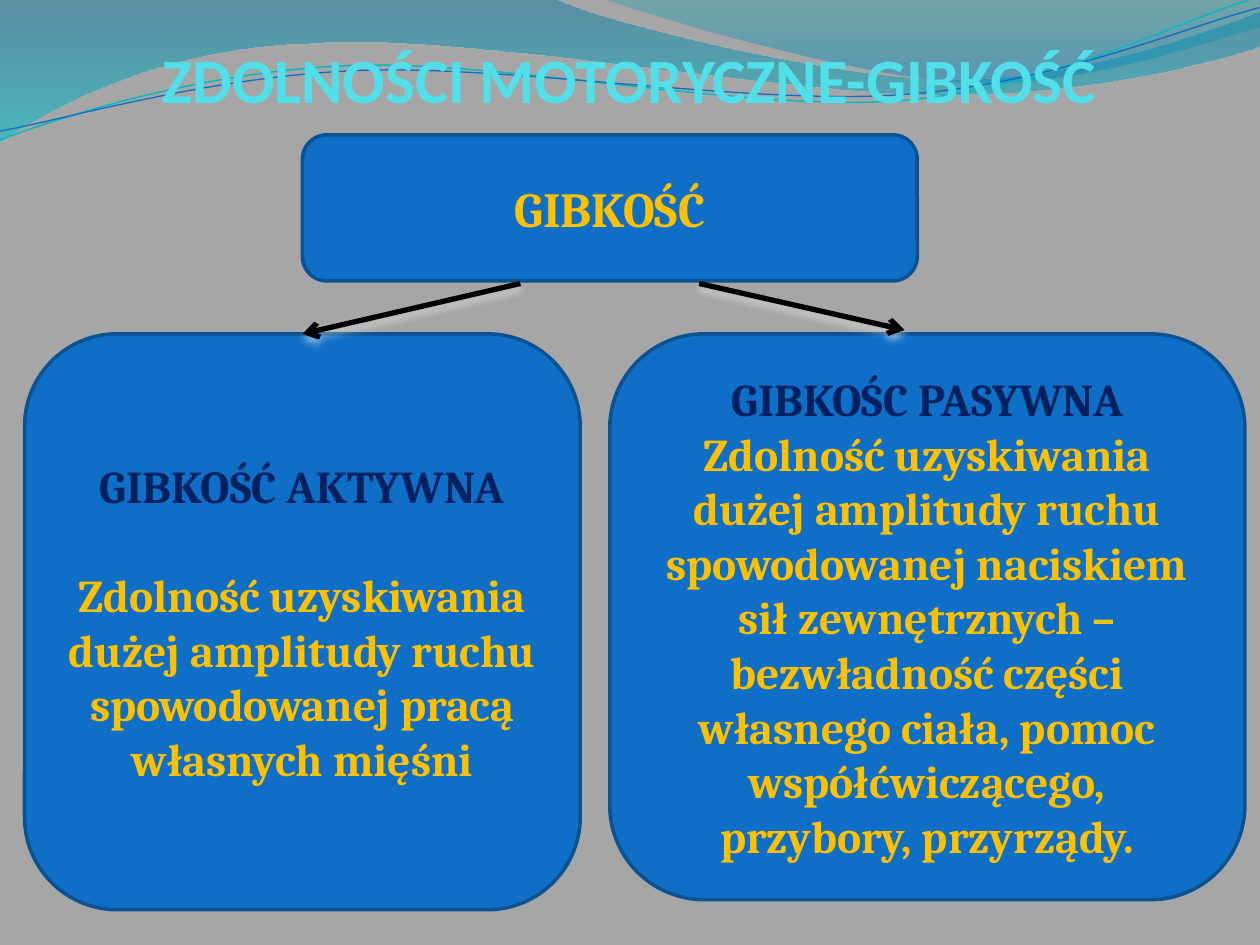
from math import cos, radians, sin

from lxml import etree
from pptx import Presentation
from pptx.dml.color import RGBColor
from pptx.enum.shapes import MSO_CONNECTOR, MSO_SHAPE
from pptx.enum.text import MSO_ANCHOR, PP_ALIGN
from pptx.oxml.ns import qn
from pptx.util import Inches, Pt

STRAIGHT = MSO_CONNECTOR.STRAIGHT
ROUNDED = MSO_SHAPE.ROUNDED_RECTANGLE
CENTER = PP_ALIGN.CENTER
MIDDLE, BOTTOM = MSO_ANCHOR.MIDDLE, MSO_ANCHOR.BOTTOM

# Grid of 100 columns by 75 rows
SLIDE_W, SLIDE_H = Inches(10), Inches(7.5)
COLUMN, ROW = SLIDE_W / 100, SLIDE_H / 75
TOP_SIDE = 0
LINE_TILT = -2.7

GREY, BLUE, DARK_BLUE = "A6A6A6", "0F6FC6", "0B5292"
NAVY, GOLD, AQUA, BLACK, WHITE = "002060", "FFC000", "51E0EA", "000000", "FFFFFF"

# Wave outlines on the grid: two numbers make a line, six make a curve
BROAD_WAVE = [(0, 0), (44, -0.1), (47.6, 1.7, 66.4, 6.3, 75.8, 6.3),
              (85.3, 6.3, 95.8, 2.6, 100, 0.9), (100.1, 3.6),
              (98.3, 4.4, 87, 7.6, 74.6, 7.5), (62.2, 7.5, 38.2, 2.8, 25.7, 3.4),
              (12.9, 3.6, 4.6, 8.3, -0.1, 11.3)]
RIGHT_WAVE = [(47.9, -0.1), (50.9, 1.1, 68.2, 6.2, 76.9, 6.5),
              (85.6, 6.9, 96.1, 3.2, 100, 2.1), (100, 0)]
TEAL_LINE = [(0, 11.1), (4.8, 9.3, 15.8, 5.7, 27.7, 5.2),
             (39.5, 4.7, 59.3, 8.9, 71.3, 8), (83.3, 7.1, 93.8, 1.5, 99.8, -0.2)]
BLUE_LINE = [(0, 10.4), (4.7, 9.6, 16.4, 6.1, 28.3, 5.6),
             (40.3, 5.1, 59.7, 8.4, 71.7, 7.5), (83.6, 6.7, 94.1, 2.1, 100, 0.6)]


def rgb(value):
    return RGBColor.from_string(value)


def on_grid(*lengths):
    """Turn alternating column and row values into slide lengths."""
    return [round(n * (ROW if i % 2 else COLUMN)) for i, n in enumerate(lengths)]


def level(outline, center, tilt):
    """Turn an outline back by its tilt around a center."""
    (cx, cy), turn = center, radians(-tilt)
    leveled = []
    for segment in outline:
        pairs = [(x - cx, y - cy) for x, y in zip(segment[::2], segment[1::2])]
        leveled.append([n for x, y in pairs
                        for n in (cx + x * cos(turn) - y * sin(turn),
                                  cy + x * sin(turn) + y * cos(turn))])
    return leveled


def add_wave(slide, outline, closed):
    """Draw an outline, joining each curve's three nodes into one Bezier."""
    start, *nodes = [on_grid(*pair) for segment in outline
                     for pair in zip(segment[::2], segment[1::2])]
    builder = slide.shapes.build_freeform(*start, scale=1.0)
    builder.add_line_segments(nodes, close=closed)
    wave = builder.convert_to_shape()
    wave.shadow.inherit = False
    steps = wave.element.spPr.iter(qn("a:lnTo"))
    steps = iter(list(steps))
    for segment in outline[1:]:
        step = next(steps)
        if len(segment) == 6:
            step.tag = qn("a:cubicBezTo")
            for _ in range(2):
                extra = next(steps)
                step.append(extra[0])
                extra.getparent().remove(extra)
    return wave


def add_wave_band(slide, outline, stops):
    band = add_wave(slide, outline, True)
    band.line.fill.background()
    band.fill.gradient()
    band.fill.gradient_angle = 270
    for stop, (position, color, _) in zip(band.fill.gradient_stops, stops):
        stop.position = position
        stop.color.rgb = rgb(color)
    fill_colors = band.element.spPr.iter(qn("a:srgbClr"))
    for node, (_, _, opacity) in zip(fill_colors, stops):
        etree.SubElement(node, qn("a:alpha"), val=str(opacity * 1000))


def add_wave_line(slide, outline, center, color, width):
    line = add_wave(slide, level(outline, center, LINE_TILT), False)
    line.rotation = LINE_TILT
    line.fill.background()
    line.line.color.rgb = rgb(color)
    line.line.width = Pt(width)


def add_header_waves(slide):
    add_wave_band(slide, BROAD_WAVE, [(0, "0074A1", 45), (1, "00C6CF", 55)])
    add_wave_band(slide, RIGHT_WAVE, [(0, "00A1A9", 30), (0.8, "008BBF", 45)])
    add_wave_line(slide, TEAL_LINE, (49.9, 5.75), "0AB8BF", 0.85)
    add_wave_line(slide, BLUE_LINE, (49.95, 5.9), BLUE, 0.75)


def write(frame, lines, font, size, gap=0):
    """Write (text, colour) paragraphs, centred, with a gap between them."""
    frame.word_wrap = True
    for index, (text, color) in enumerate(lines):
        paragraph = frame.add_paragraph() if index else frame.paragraphs[0]
        paragraph.text = text
        paragraph.alignment = CENTER
        if index and gap:
            paragraph.space_before = Pt(gap)
        paragraph.font.name = font
        paragraph.font.size = Pt(size)
        paragraph.font.bold = True
        paragraph.font.color.rgb = rgb(color)


def add_title(slide, box, text):
    frame = slide.shapes.add_textbox(*on_grid(*box)).text_frame
    frame.margin_left = frame.margin_top = frame.margin_bottom = 0
    frame.margin_right = Inches(0.02)
    frame.vertical_anchor = BOTTOM
    write(frame, [(text, AQUA)], "Calibri", 36)


def add_card(slide, box, lines, size, gap=0):
    card = slide.shapes.add_shape(ROUNDED, *on_grid(*box))
    card.shadow.inherit = False
    card.fill.solid()
    card.fill.fore_color.rgb = rgb(BLUE)
    card.line.color.rgb = rgb(DARK_BLUE)
    card.line.width = Pt(2)
    card.text_frame.vertical_anchor = MIDDLE
    write(card.text_frame, lines, "Cambria", size, gap)
    return card


def add_arrow(slide, ends):
    arrow = slide.shapes.add_connector(STRAIGHT, *on_grid(*ends))
    arrow.line.color.rgb = rgb(BLACK)
    arrow.line.width = Pt(3)
    properties = arrow.element.spPr
    etree.SubElement(properties.find(qn("a:ln")), qn("a:tailEnd"), type="arrow")
    # Soft light shadow below the arrow
    effects = etree.SubElement(properties, qn("a:effectLst"))
    shadow = etree.SubElement(effects, qn("a:outerShdw"), blurRad=str(Pt(4.5)),
                              dist=str(Pt(3)), dir="5400000", rotWithShape="0")
    tint = etree.SubElement(shadow, qn("a:srgbClr"), val=WHITE)
    etree.SubElement(tint, qn("a:alpha"), val="48000")
    return arrow


def add_flexibility_tree(slide):
    add_card(slide, (24, 10.7, 48.8, 11.6), [("GIBKOŚĆ", GOLD)], 28)
    active = add_card(slide, (1.95, 26.5, 44.1, 45.7), [
        ("GIBKOŚĆ AKTYWNA", NAVY),
        ("Zdolność uzyskiwania dużej amplitudy ruchu spowodowanej pracą "
         "własnych mięśni", GOLD)], 26, gap=31)
    add_card(slide, (48.4, 26.5, 50.4, 44.9), [
        ("GIBKOŚC PASYWNA", NAVY),
        ("Zdolność uzyskiwania dużej amplitudy ruchu spowodowanej naciskiem "
         "sił zewnętrznych – bezwładność części własnego ciała, pomoc "
         "współćwiczącego, przybory, przyrządy.", GOLD)], 26)
    add_arrow(slide, (41.3, 22.5, 24, 26.5)).end_connect(active, TOP_SIDE)
    add_arrow(slide, (55.5, 22.5, 71.8, 26.2))


def main():
    deck = Presentation()
    deck.slide_width, deck.slide_height = SLIDE_W, SLIDE_H
    slide = deck.slides.add_slide(deck.slide_layouts[6])
    slide.background.fill.solid()
    slide.background.fill.fore_color.rgb = rgb(GREY)
    add_header_waves(slide)
    add_title(slide, (2.8, 0, 94.5, 9.2), "ZDOLNOŚCI MOTORYCZNE-GIBKOŚĆ")
    add_flexibility_tree(slide)
    deck.save("out.pptx")


if __name__ == "__main__":
    main()
